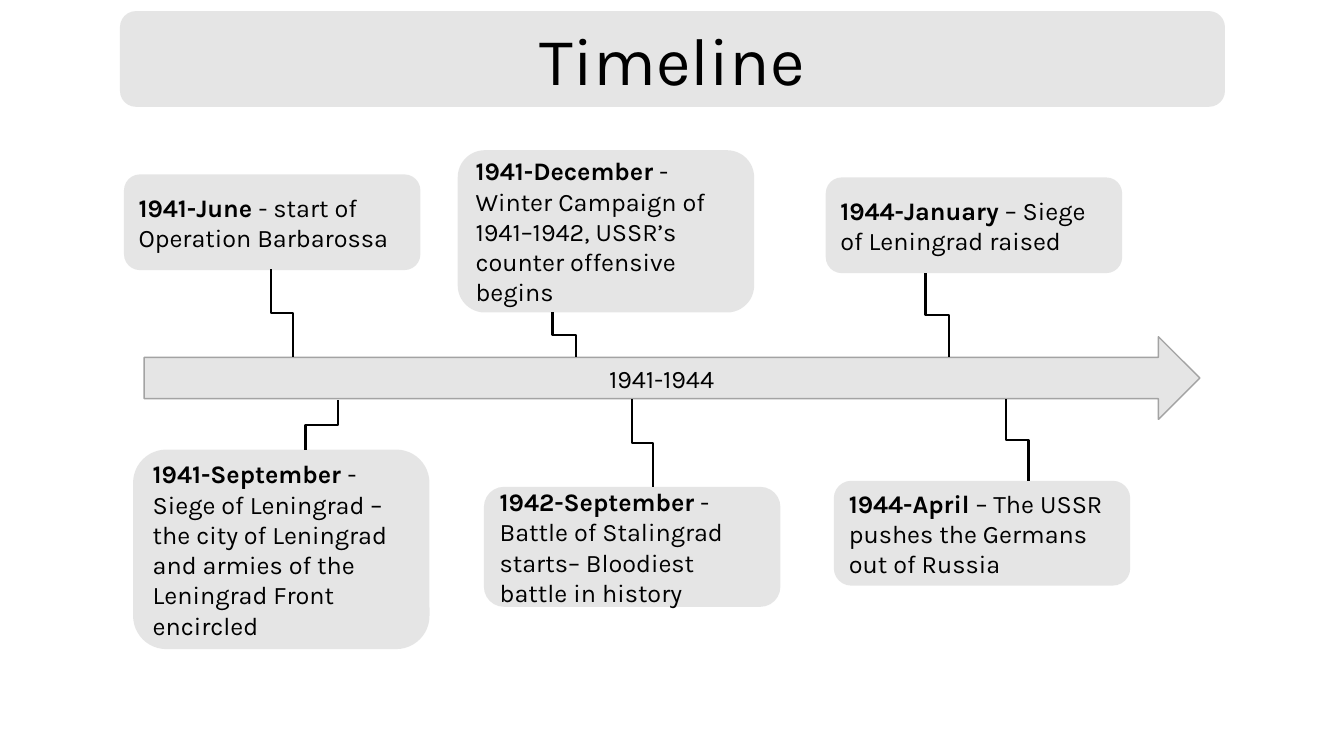
"""Build a timeline slide of the Eastern Front, 1941 to 1944."""
import pptx
import pptx.util
import pptx.dml.color
import pptx.enum.shapes
import pptx.enum.text
import pptx.oxml.ns
from lxml import etree

Inches, Pt = pptx.util.Inches, pptx.util.Pt
RGB = pptx.dml.color.RGBColor.from_string
Kind = pptx.enum.shapes.MSO_SHAPE
Align = pptx.enum.text.PP_ALIGN
qn = pptx.oxml.ns.qn
COLORS = {"fill": "DDDDDD", "edge": "A3A3A3", "ink": "000000"}

deck = pptx.Presentation()
deck.slide_width, deck.slide_height = Inches(13.33), Inches(7.5)
slide = deck.slides.add_slide(deck.slide_layouts[6])


def add_box(kind, place, runs, size=18, align=Align.LEFT, alpha=74):
    box = slide.shapes.add_shape(kind, *[Inches(n) for n in place])
    box.shadow.inherit = False
    box.fill.solid()
    box.fill.fore_color.rgb = RGB(COLORS["fill"])
    tint = box._element.spPr.find(".//" + qn("a:srgbClr"))
    etree.SubElement(tint, qn("a:alpha")).set("val", str(alpha * 1000))
    box.line.fill.background()
    frame = box.text_frame
    frame.word_wrap = True
    frame.vertical_anchor = pptx.enum.text.MSO_ANCHOR.MIDDLE
    para = frame.paragraphs[0]
    para.alignment = align
    for text, bold in runs:
        run = para.add_run()
        run.text = text
        run.font.name = "Karla"
        run.font.size = Pt(size)
        run.font.bold = bold
        run.font.color.rgb = RGB(COLORS["ink"])
    return box


add_box(Kind.ROUNDED_RECTANGLE, (1.19, 0.11, 10.96, 0.95),
        [("Timeline", False)], 48, Align.CENTER)
arrow = add_box(Kind.RIGHT_ARROW, (1.43, 3.34, 10.47, 0.82),
                [("1941-1944", False)], align=Align.CENTER, alpha=76)
arrow.line.color.rgb = RGB(COLORS["edge"])
arrow.line.width = Pt(1)

events = [
    (1.23, 1.73, 0.95, "1941-June ", "- start of Operation Barbarossa"),
    (1.32, 4.46, 1.98, "1941-September ",
     "- Siege of Leningrad – the city of Leningrad and armies of the "
     "Leningrad Front encircled"),
    (4.54, 1.49, 1.61, "1941-December",
     " - Winter Campaign of 1941–1942, USSR’s counter offensive begins"),
    (4.8, 4.83, 1.19, "1942-September",
     " - Battle of Stalingrad starts– Bloodiest battle in history"),
    (8.19, 1.76, 0.95, "1944-January", " – Siege of Leningrad raised"),
    (8.27, 4.77, 1.04, "1944-April",
     " – The USSR pushes the Germans out of Russia"),
]
for left, top, height, date, event in events:
    add_box(Kind.ROUNDED_RECTANGLE, (left, top, 2.94, height),
            [(date, True), (event, False)])

links = [
    (2.69, 2.67, 2.91, 3.54),
    (9.18, 2.71, 9.41, 3.54),
    (5.48, 3.1, 5.71, 3.54),
    (3.35, 3.97, 3.03, 4.46),
    (6.27, 3.96, 6.48, 4.83),
    (9.98, 3.96, 10.2, 4.77),
]
for x1, y1, x2, y2 in links:
    mid_x, mid_y = (x1 + x2) / 2, (y1 + y2) / 2
    side = 1 if x2 > x1 else -1
    reach, rise = side * (y2 - y1) / 2, abs(x2 - x1) / 2
    link = slide.shapes.add_connector(
        pptx.enum.shapes.MSO_CONNECTOR.ELBOW,
        Inches(mid_x + reach), Inches(mid_y - rise),
        Inches(mid_x - reach), Inches(mid_y + rise))
    turn = 270 if side > 0 else 90
    props = link._element.spPr
    props.find(qn("a:xfrm")).set("rot", str(turn * 60000))
    link.line.color.rgb = RGB(COLORS["ink"])
    link.line.width = Pt(1.5)
    etree.SubElement(props, qn("a:effectLst"))

deck.save("out.pptx")
